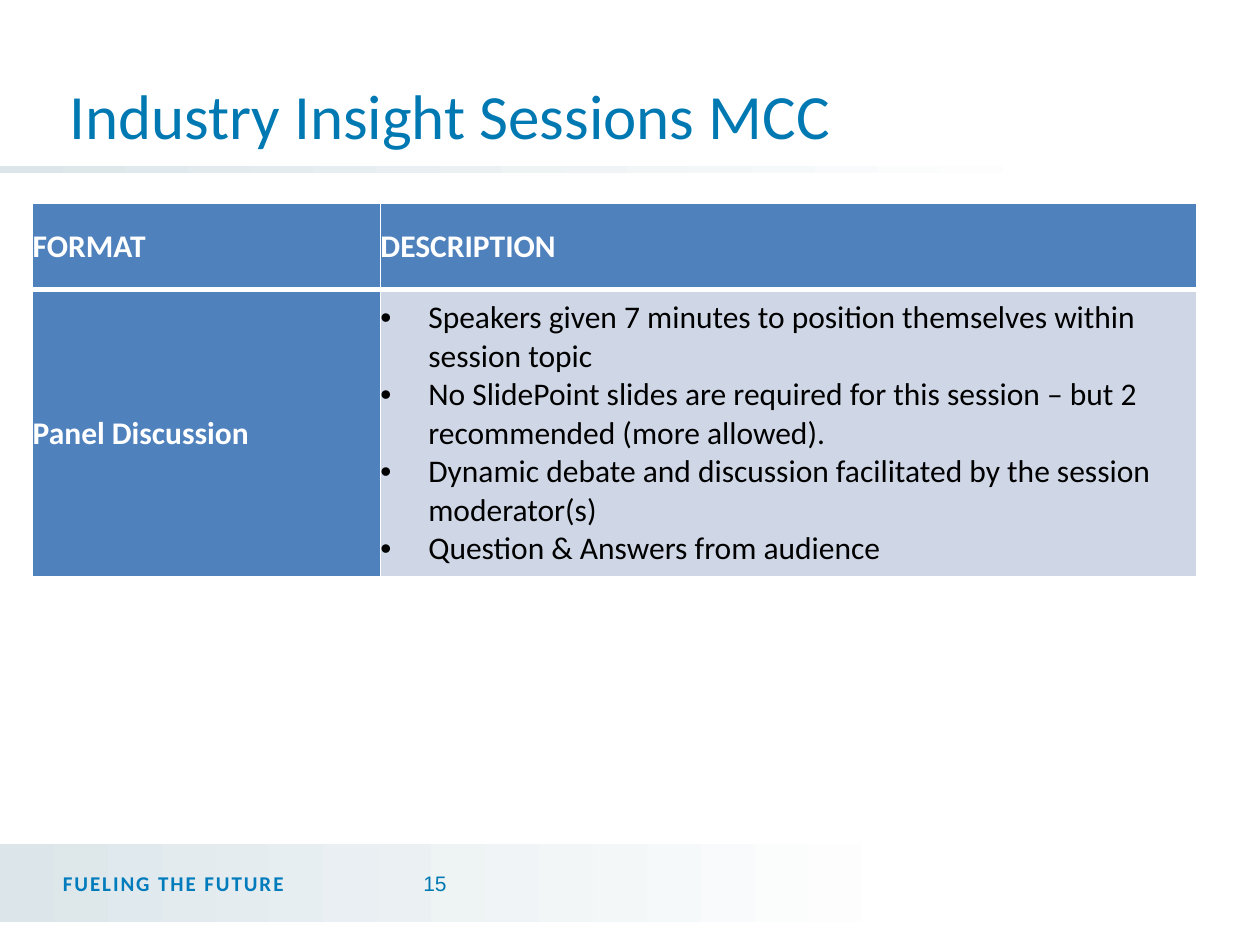
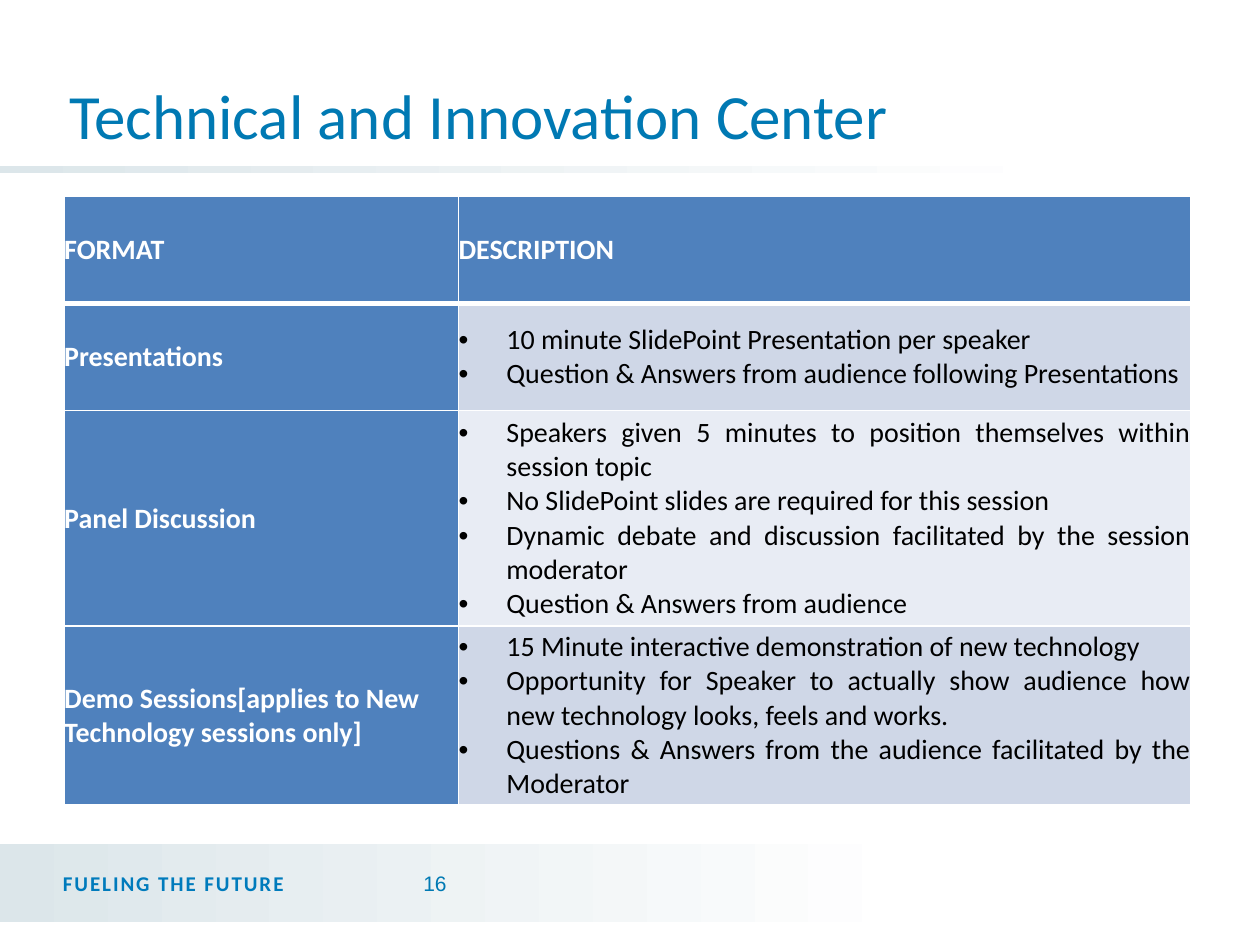
"""Build two slides that describe session formats in tables."""
from dataclasses import dataclass

from pptx import Presentation
from pptx import util as u
from pptx.dml.color import RGBColor
from pptx.enum import shapes, text
from pptx.oxml.ns import qn
from lxml import etree


@dataclass(frozen=True)
class Theme:
    title: str = "0079B3"
    motto: str = "007BBC"
    fade: str = "DCE6EA"
    head: str = "4F81BD"
    bands: tuple = ("CFD7E7", "E8ECF4")
    white: str = "FFFFFF"
    black: str = "000000"
    face: str = "Calibri"
    plain: str = "Arial"
    big: int = 36
    small: int = 12
    indent: float = 27.36
    track: int = 110


T = Theme()
LEFT, JUST = text.PP_ALIGN.LEFT, text.PP_ALIGN.JUSTIFY
MID, LOW = text.MSO_ANCHOR.MIDDLE, text.MSO_ANCHOR.BOTTOM


def rgb(code):
    return RGBColor.from_string(code)


def apply(item, form):
    for name, value in form.items():
        setattr(item, name, value)


def pts(*vals):
    return [u.Pt(v) for v in vals]


def pad(size):
    sides = ("left", "top", "right", "bottom")
    return {f"margin_{side}": u.Pt(size) for side in sides}


def style(font, size, color, bold=False, name=T.face):
    apply(font, {"size": u.Pt(size), "bold": bold, "name": name})
    font.color.rgb = rgb(color)


def band(slide, box, stop):
    bar = slide.shapes.add_shape(shapes.MSO_SHAPE.RECTANGLE, *pts(*box))
    bar.shadow.inherit = False
    bar.line.fill.background()
    bar.fill.gradient()
    bar.fill.gradient_angle = 0
    ends = ((0, T.fade), (stop, T.white))
    for mark, (place, color) in zip(bar.fill.gradient_stops, ends):
        mark.color.rgb = rgb(color)
        mark.position = place


def label(slide, box, words, look, inset=3.6, anchor=MID, wrap=True):
    frame = slide.shapes.add_textbox(*pts(*box)).text_frame
    apply(frame, pad(inset) | {"word_wrap": wrap, "vertical_anchor": anchor})
    run = frame.paragraphs[0].add_run()
    run.text = words
    style(run.font, **look)
    return run


def base(deck, title, number):
    slide = deck.slides.add_slide(deck.slide_layouts[6])
    band(slide, (0, 482.4, 534.24, 44.64), 0.98)
    band(slide, (0, 95.04, 684, 3.6), 0.89)
    motto = label(slide, (36, 497.52, 162.72, 13.68), "FUELING THE FUTURE",
                  {"size": T.small, "color": T.motto, "bold": True}, inset=0)
    motto.font._element.set("spc", str(T.track))
    label(slide, (36, 0.72, 648, 90), title,
          {"size": T.big, "color": T.title}, anchor=LOW)
    label(slide, (238.32, 493.92, 20.88, 20.88), str(number),
          {"size": T.small, "color": T.title, "name": T.plain}, wrap=False)
    return slide


def border(cell, foot):
    props = cell._tc.get_or_add_tcPr()
    for side, wide in {"L": 1, "R": 1, "T": 1, "B": foot}.items():
        line = etree.SubElement(props, qn(f"a:ln{side}"), w=str(u.Pt(wide)))
        fill = etree.SubElement(line, qn("a:solidFill"))
        etree.SubElement(fill, qn("a:srgbClr"), val=T.white)


def bullet(para):
    props = para._p.get_or_add_pPr()
    wide = u.Pt(T.indent)
    apply_xml = {"marL": str(wide), "indent": str(-wide)}
    props.attrib.update(apply_xml)
    etree.SubElement(props, qn("a:buFont"), typeface=T.plain)
    etree.SubElement(props, qn("a:buChar"), char="•")


def fill(cell, lines, color, size, align=LEFT, listed=False, foot=1):
    border(cell, foot)
    apply(cell, pad(0) | {"vertical_anchor": MID})
    cell.fill.solid()
    cell.fill.fore_color.rgb = rgb(color)
    frame = cell.text_frame
    for row, words in enumerate(lines):
        para = frame.add_paragraph() if row else frame.paragraphs[0]
        para.alignment = align
        if listed:
            bullet(para)
        run = para.add_run()
        run.text = words
        ink = T.black if listed else T.white
        style(run.font, size, ink, bold=not listed)


def grid(slide, spot, cols, rows, items, size, align):
    box = pts(*spot, sum(cols), sum(rows))
    table = slide.shapes.add_table(len(rows), len(cols), *box).table
    for col, wide in zip(table.columns, cols):
        col.width = u.Pt(wide)
    for row, high in zip(table.rows, rows):
        row.height = u.Pt(high)
    for col, words in enumerate(("FORMAT", "DESCRIPTION")):
        fill(table.cell(0, col), [words], T.head, size, JUST, foot=3)
    for row, (name, points) in enumerate(items.items(), 1):
        fill(table.cell(row, 0), [name], T.head, size)
        shade = T.bands[(row - 1) % len(T.bands)]
        fill(table.cell(row, 1), points, shade, size, align, listed=True)


INSIGHT = {
    "Panel Discussion": [
        "Speakers given 7 minutes to position themselves within session topic",
        "No SlidePoint slides are required for this session – but 2 "
        "recommended (more allowed).",
        "Dynamic debate and discussion facilitated by the session moderator(s)",
        "Question & Answers from audience",
    ],
}
CENTER = {
    "Presentations": [
        "10 minute SlidePoint Presentation per speaker",
        "Question & Answers from audience following Presentations",
    ],
    "Panel Discussion": [
        "Speakers given 5 minutes to position themselves within session topic",
        "No SlidePoint slides are required for this session",
        "Dynamic debate and discussion facilitated by the session moderator",
        "Question & Answers from audience",
    ],
    "Demo Sessions[applies to New Technology sessions only]": [
        "15 Minute interactive demonstration of new technology",
        "Opportunity for Speaker to actually show audience how new "
        "technology looks, feels and works.",
        "Questions & Answers from the audience facilitated by the Moderator",
    ],
}


def main():
    deck = Presentation()
    apply(deck, {"slide_width": u.Pt(720), "slide_height": u.Pt(540)})
    slide = base(deck, "Industry Insight Sessions MCC", 15)
    grid(slide, (18.72, 115.92), (198.72, 466.56), (49.68, 164.16),
         INSIGHT, 18, LEFT)
    slide = base(deck, "Technical and Innovation Center", 16)
    grid(slide, (36.72, 112.32), (225.36, 418.32),
         (61.2, 61.2, 123.12, 102.24), CENTER, 16, JUST)
    deck.save("out.pptx")


if __name__ == "__main__":
    main()
